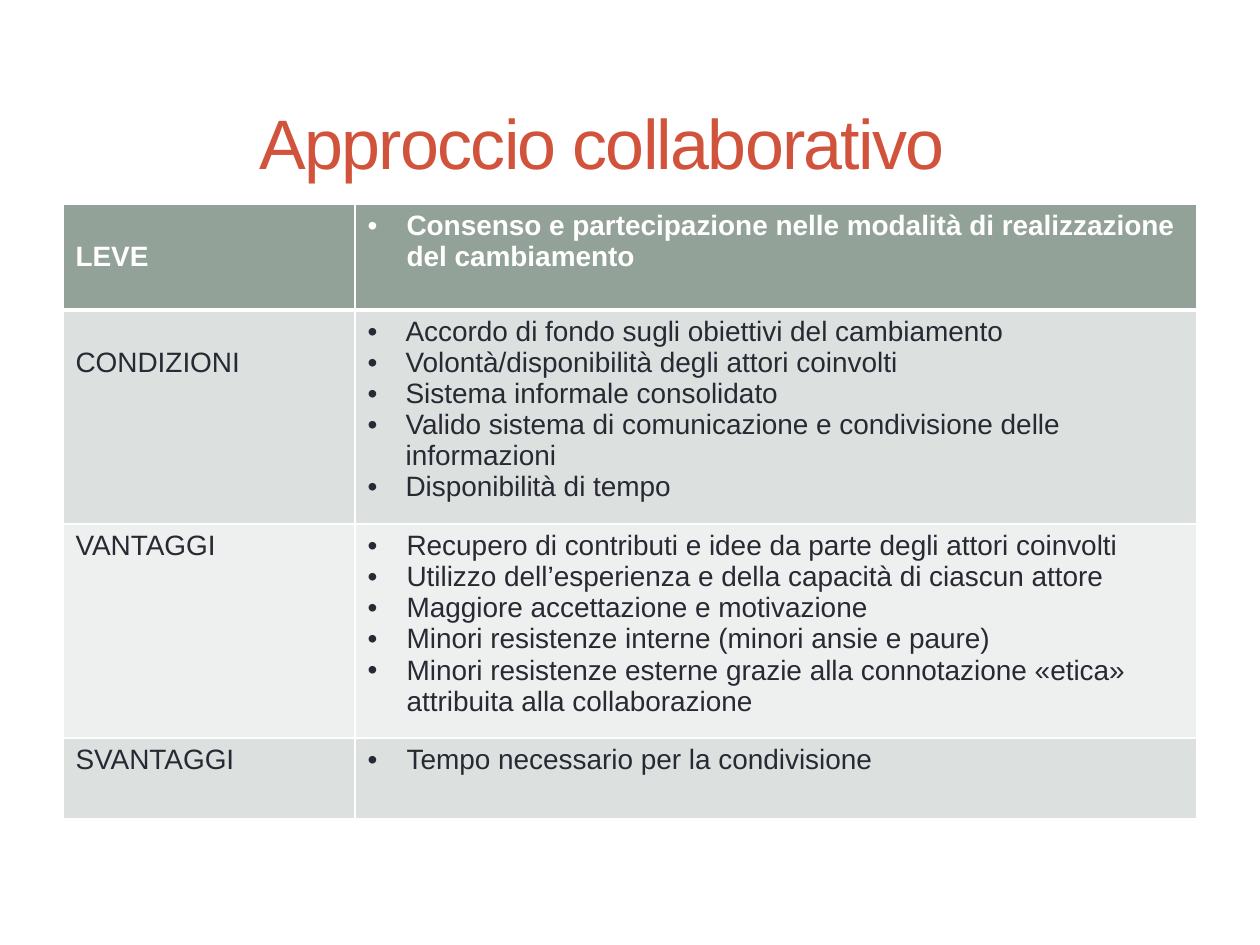
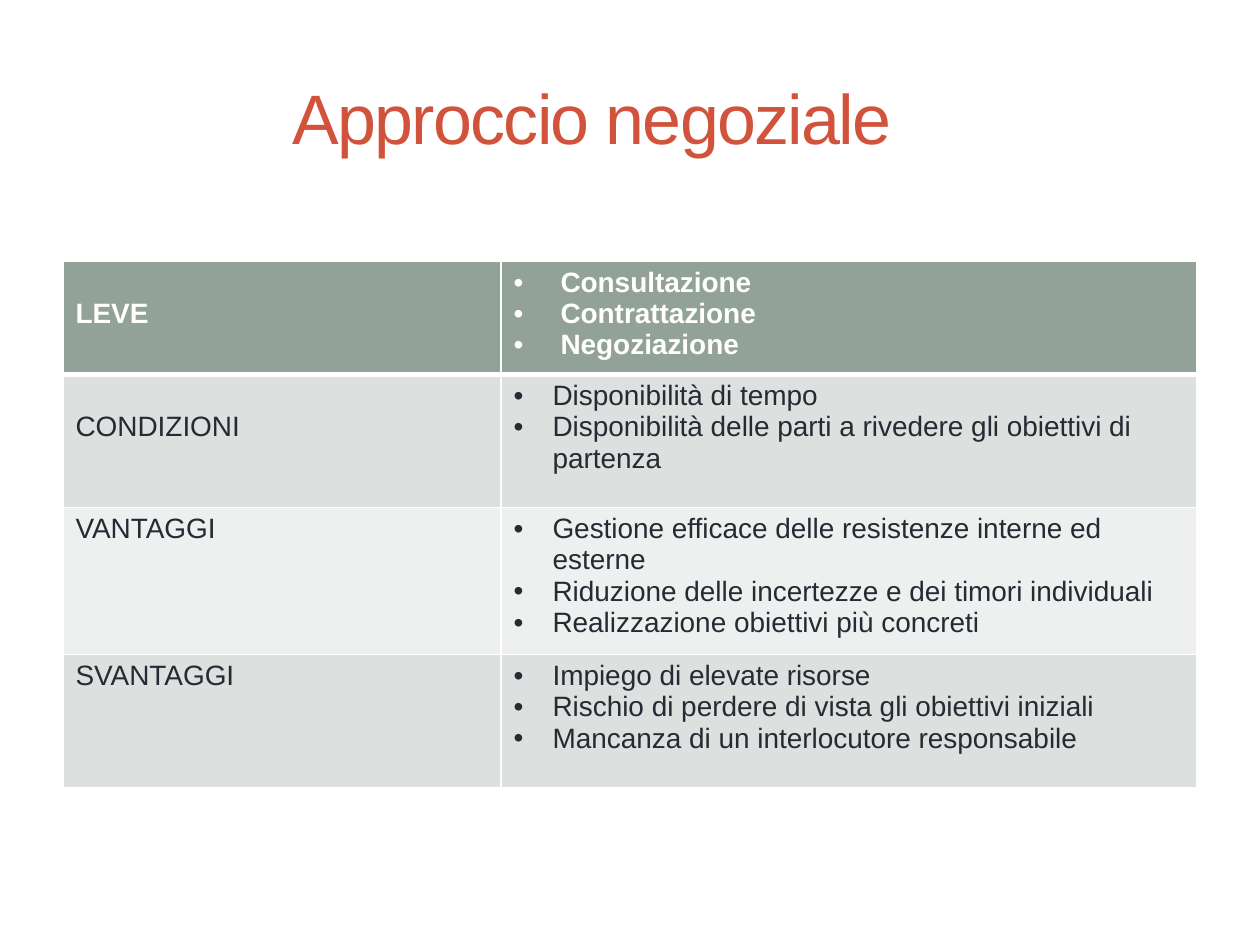
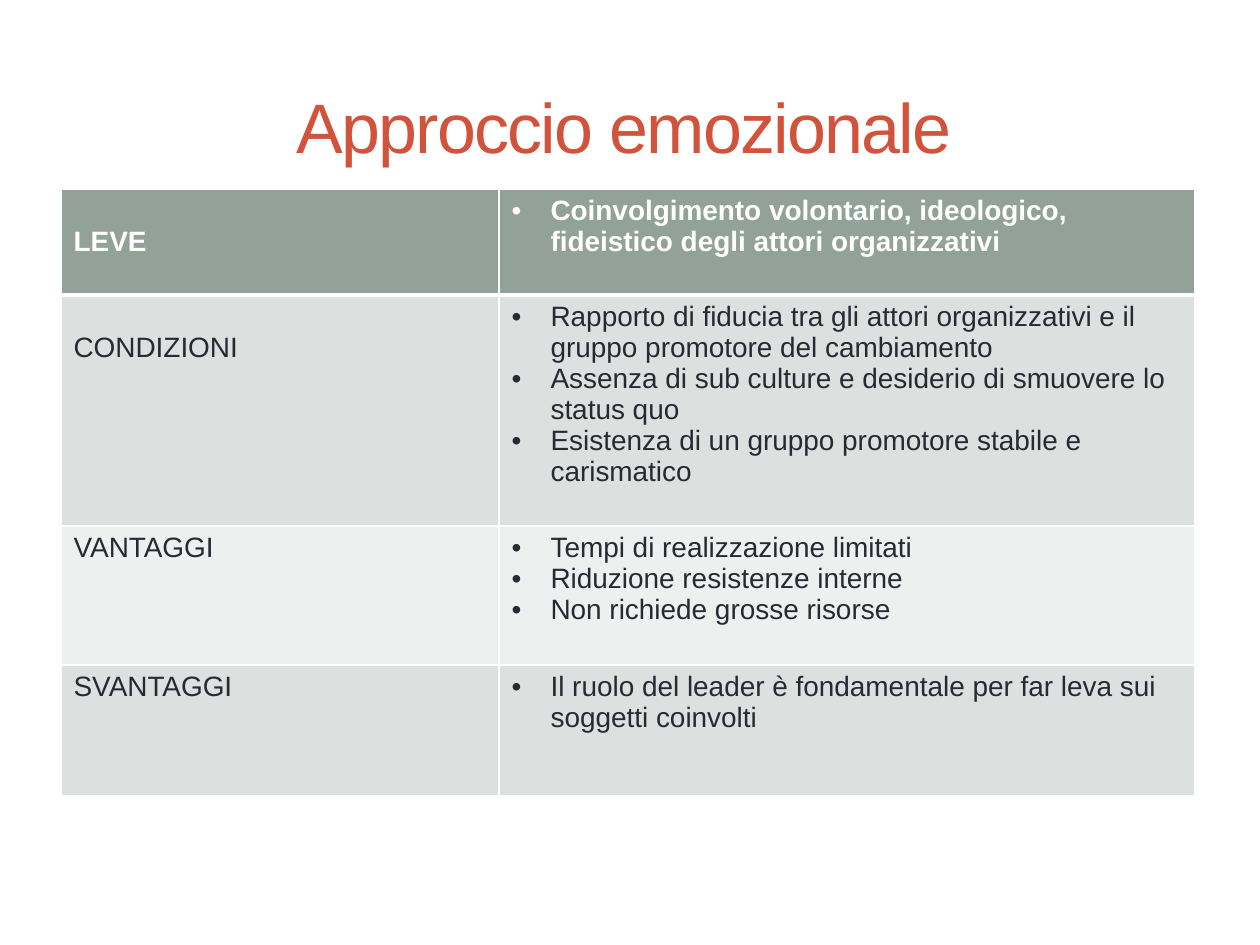
from dataclasses import dataclass

from lxml import etree
from pptx import Presentation
from pptx import util as u
from pptx.dml.color import RGBColor
from pptx.enum import text
from pptx.oxml.ns import qn


@dataclass(frozen=True)
class Theme:
    font: str = "Arial"
    accent: str = "D2533C"
    header: str = "93A299"
    bands: tuple[str, str] = ("DCE0DE", "EEF0EF")
    ink: str = "292934"
    white: str = "FFFFFF"
    title_size: int = 40
    title_tracking: int = -100
    body_size: int = 16
    rule: int = 1
    header_rule: int = 3


@dataclass(frozen=True)
class Row:
    topic: str
    points: tuple[str, ...]
    height: int
    indent: int = 39


@dataclass(frozen=True)
class Approach:
    title: str
    title_at: tuple[int, int]
    table_at: tuple[int, int]
    topic_width: int
    rows: tuple[Row, ...]


THEME = Theme()
PX_PER_INCH = 126
SLIDE_W, SLIDE_H = 1260, 945
CONTENT_W, TITLE_H = 1134, 158
MARGIN_TOP, LINE_H = 6, 31
LOWERED_ROWS = 2  # topics of these first rows start one line down


def px(length: int) -> int:
    return round(length * u.Inches(1) / PX_PER_INCH)


APPROACHES = (
    Approach("Approccio collaborativo", (35, 62), (63, 204), 292, (
        Row("LEVE", (
            "Consenso e partecipazione nelle modalità di realizzazione del cambiamento",
        ), 106),
        Row("CONDIZIONI", (
            "Accordo di fondo sugli obiettivi del cambiamento",
            "Volontà/disponibilità degli attori coinvolti",
            "Sistema informale consolidato",
            "Valido sistema di comunicazione e condivisione delle informazioni",
            "Disponibilità di tempo",
        ), 200, indent=38),
        Row("VANTAGGI", (
            "Recupero di contributi e idee da parte degli attori coinvolti",
            "Utilizzo dell’esperienza e della capacità di ciascun attore",
            "Maggiore accettazione e motivazione",
            "Minori resistenze interne (minori ansie e paure)",
            "Minori resistenze esterne grazie alla connotazione «etica» "
            "attribuita alla collaborazione",
        ), 200),
        Row("SVANTAGGI", ("Tempo necessario per la condivisione",), 81),
    )),
    Approach("Approccio negoziale", (25, 38), (63, 261), 438, (
        Row("LEVE", ("Consultazione", "Contrattazione", "Negoziazione"), 108, indent=47),
        Row("CONDIZIONI", (
            "Disponibilità di tempo",
            "Disponibilità delle parti a rivedere gli obiettivi di partenza",
        ), 133),
        Row("VANTAGGI", (
            "Gestione efficace delle resistenze interne ed esterne",
            "Riduzione delle incertezze e dei timori individuali",
            "Realizzazione obiettivi più concreti",
        ), 141),
        Row("SVANTAGGI", (
            "Impiego di elevate risorse",
            "Rischio di perdere di vista gli obiettivi iniziali",
            "Mancanza di un interlocutore responsabile",
        ), 133),
    )),
    Approach("Approccio emozionale", (57, 47), (61, 189), 438, (
        Row("LEVE", (
            "Coinvolgimento volontario, ideologico, fideistico degli attori organizzativi",
        ), 106),
        Row("CONDIZIONI", (
            "Rapporto di fiducia tra gli attori organizzativi e il gruppo promotore "
            "del cambiamento",
            "Assenza di sub culture e desiderio di smuovere lo status quo",
            "Esistenza di un gruppo promotore stabile e carismatico",
        ), 231),
        Row("VANTAGGI", (
            "Tempi di realizzazione limitati",
            "Riduzione resistenze interne",
            "Non richiede grosse risorse",
        ), 139),
        Row("SVANTAGGI", (
            "Il ruolo del leader è fondamentale per far leva sui soggetti coinvolti",
        ), 131),
    )),
)


# Text styling
def style_run(run, size: int, color: str, bold: bool = False) -> None:
    run.font.name = THEME.font
    run.font.size = u.Pt(size)
    run.font.bold = bold
    run.font.color.rgb = RGBColor.from_string(color)


def add_bullet(paragraph, indent: int) -> None:
    properties = paragraph._p.get_or_add_pPr()
    properties.set("marL", str(px(indent)))
    properties.set("indent", str(-px(indent)))
    etree.SubElement(properties, qn("a:buFont"), typeface=THEME.font)
    etree.SubElement(properties, qn("a:buChar"), char="•")


# Title
def draw_title(slide, approach: Approach) -> None:
    left, top = approach.title_at
    title = slide.shapes.add_textbox(px(left), px(top), px(CONTENT_W), px(TITLE_H))
    frame = title.text_frame
    frame.word_wrap = True
    frame.vertical_anchor = text.MSO_ANCHOR.MIDDLE
    frame.text = approach.title
    heading = frame.paragraphs[0]
    heading.alignment = text.PP_ALIGN.CENTER
    run = heading.runs[0]
    style_run(run, THEME.title_size, THEME.accent)
    run.font._element.set("spc", str(THEME.title_tracking))


# Table cells
def add_borders(cell, row_index: int) -> None:
    properties = cell._tc.get_or_add_tcPr()
    header_edge = {0: "lnB", 1: "lnT"}.get(row_index)
    for edge in ("lnL", "lnR", "lnT", "lnB"):
        width = THEME.header_rule if edge == header_edge else THEME.rule
        line = etree.SubElement(properties, qn(f"a:{edge}"), w=str(u.Pt(width)))
        fill = etree.SubElement(line, qn("a:solidFill"))
        etree.SubElement(fill, qn("a:srgbClr"), val=THEME.white)


def fill_cell(cell, lines: tuple[str, ...], row_index: int, indent: int = 0) -> None:
    is_header = row_index == 0
    add_borders(cell, row_index)
    cell.fill.solid()
    band = THEME.header if is_header else THEME.bands[(row_index - 1) % 2]
    cell.fill.fore_color.rgb = RGBColor.from_string(band)
    cell.text_frame.text = "\n".join(lines)
    for paragraph in cell.text_frame.paragraphs:
        if indent:
            add_bullet(paragraph, indent)
        color = THEME.white if is_header else THEME.ink
        style_run(paragraph.runs[0], THEME.body_size, color, is_header)


# Table
def draw_table(slide, approach: Approach) -> None:
    left, top = approach.table_at
    height = sum(row.height for row in approach.rows)
    table = slide.shapes.add_table(
        len(approach.rows), 2, px(left), px(top), px(CONTENT_W), px(height)).table
    table.horz_banding = False
    table.columns[0].width = px(approach.topic_width)
    table.columns[1].width = px(CONTENT_W - approach.topic_width)
    for index, row in enumerate(approach.rows):
        table.rows[index].height = px(row.height)
        topic, points = table.cell(index, 0), table.cell(index, 1)
        fill_cell(topic, (row.topic,), index)
        fill_cell(points, row.points, index, row.indent)
        if index < LOWERED_ROWS:
            topic.margin_top = px(MARGIN_TOP + LINE_H)


def main() -> None:
    deck = Presentation()
    deck.slide_width, deck.slide_height = px(SLIDE_W), px(SLIDE_H)
    blank = deck.slide_layouts[6]
    for approach in APPROACHES:
        slide = deck.slides.add_slide(blank)
        draw_title(slide, approach)
        draw_table(slide, approach)
    deck.save("out.pptx")


if __name__ == "__main__":
    main()
